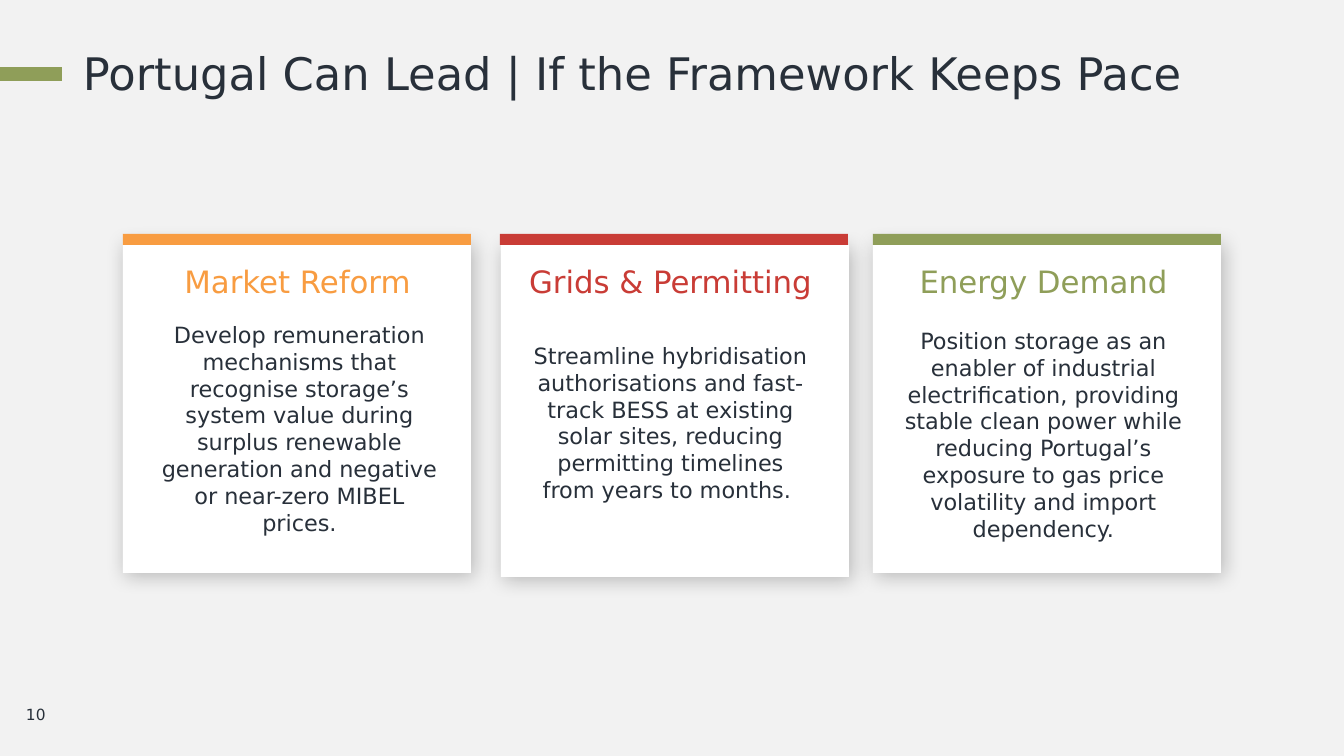
"""Builds the slide on Portugal's storage framework with three policy cards."""
from lxml import etree
from pptx import Presentation
from pptx.dml.color import RGBColor
from pptx.enum.shapes import MSO_CONNECTOR, MSO_SHAPE
from pptx.enum.text import MSO_ANCHOR, MSO_AUTO_SIZE, PP_ALIGN
from pptx.oxml import parse_xml
from pptx.oxml.ns import qn
from pptx.util import Emu, Pt

RECTANGLE = MSO_SHAPE.RECTANGLE
STRAIGHT = MSO_CONNECTOR.STRAIGHT
LEFT, CENTER = PP_ALIGN.LEFT, PP_ALIGN.CENTER
TOP, MIDDLE = MSO_ANCHOR.TOP, MSO_ANCHOR.MIDDLE
NO_FIT = MSO_AUTO_SIZE.NONE

EMU_PER_PX = 914400 / 100.8
TITLE_ONLY = 5
FONT = "DejaVu Sans"
INK, PAPER, WHITE = "28303A", "F2F2F2", "FFFFFF"
ORANGE, RED, GREEN = "F89C41", "C93C36", "8F9E59"
CARD_WIDTH, CARD_HEIGHT = 348, 332
BAR_TOP, BAR_HEIGHT = 234, 11
HEADING_TOP = 263

SHADOW = (
    '<a:effectLst xmlns:a="http://schemas.openxmlformats.org/drawingml/2006/main">'
    '<a:outerShdw blurRad="177800" dist="38100" dir="3180000" algn="tl" rotWithShape="0">'
    '<a:srgbClr val="000000"><a:alpha val="23000"/></a:srgbClr>'
    '</a:outerShdw></a:effectLst>'
)

CARDS = [
    dict(bar_left=123, left=123, top=241, color=ORANGE, heading="Market Reform",
         heading_left=149, body_left=158, body_top=321,
         body="Develop remuneration mechanisms that recognise storage’s system value "
              "during surplus renewable generation and negative or near-zero MIBEL prices."),
    dict(bar_left=500, left=501, top=245, color=RED, heading="Grids & Permitting",
         heading_left=522, body_left=529, body_top=342,
         body="Streamline hybridisation authorisations and fast-track BESS at existing "
              "solar sites, reducing permitting timelines from years to months. "),
    dict(bar_left=873, left=873, top=241, color=GREEN, heading="Energy Demand",
         heading_left=895, body_left=902, body_top=327,
         body="Position storage as an enabler of industrial electrification, providing "
              "stable clean power while reducing Portugal’s exposure to gas price "
              "volatility and import dependency."),
]


def px(*lengths):
    """Turn pixel lengths into EMU."""
    return [Emu(round(length * EMU_PER_PX)) for length in lengths]


def rgb(color):
    """Turn a hex string into a colour."""
    return RGBColor.from_string(color)


class Composer:
    """Holds the style and the current page, and draws elements on it."""

    def __init__(self, page):
        """Start on a page with the plain background."""
        self.page = page
        page.background.fill.solid()
        page.background.fill.fore_color.rgb = rgb(PAPER)

    def fill_text(self, box, words, size, color=INK, align=LEFT, anchor=TOP, inset=0):
        """Fill a box with one styled paragraph."""
        frame = box.text_frame
        frame.word_wrap = True
        frame.auto_size = NO_FIT
        frame.vertical_anchor = anchor
        (frame.margin_left, frame.margin_top,
         frame.margin_right, frame.margin_bottom) = px(inset, inset // 2, inset, inset // 2)
        para = frame.paragraphs[0]
        para.text = words
        para.alignment = align
        para.line_spacing = 1.0
        para.space_before = Pt(0)
        para.font.name = FONT
        para.font.size = Pt(size)
        para.font.color.rgb = rgb(color)

    def title(self, area, words):
        """Move and format the title placeholder."""
        box = self.page.shapes.title
        box.left, box.top, box.width, box.height = px(*area)
        self.fill_text(box, words, 32)

    def text(self, area, words, size, **style):
        """Add a text box."""
        self.fill_text(self.page.shapes.add_textbox(*px(*area)), words, size, **style)

    def rectangle(self, area, color, shadow=False):
        """Add a filled rectangle, with a soft shadow if asked."""
        box = self.page.shapes.add_shape(RECTANGLE, *px(*area))
        box.fill.solid()
        box.fill.fore_color.rgb = rgb(color)
        box.line.fill.background()
        if shadow:
            box._element.spPr.append(parse_xml(SHADOW))
        else:
            box.shadow.inherit = False

    def line(self, ends, color, width):
        """Add a straight line."""
        rule = self.page.shapes.add_connector(STRAIGHT, *px(*ends))
        rule.line.color.rgb = rgb(color)
        rule.line.width = Pt(width)
        etree.SubElement(rule._element.spPr, qn("a:effectLst"))

    def card(self, bar_left, left, top, color, heading, heading_left,
             body_left, body_top, body):
        """Add a card with a coloured bar, a heading and a body."""
        self.rectangle((left, top, CARD_WIDTH, CARD_HEIGHT), WHITE, shadow=True)
        self.rectangle((bar_left, BAR_TOP, CARD_WIDTH, BAR_HEIGHT), color)
        self.text((heading_left, HEADING_TOP, 297, 81), heading, 22, color=color, align=CENTER)
        self.text((body_left, body_top, 283, 172), body, 16, align=CENTER)


def main():
    """Build and save the deck."""
    deck = Presentation()
    deck.slide_width, deck.slide_height = px(1344, 756)
    composer = Composer(deck.slides.add_slide(deck.slide_layouts[TITLE_ONLY]))
    composer.title((83, 46, 1180, 54), "Portugal Can Lead | If the Framework Keeps Pace")
    composer.line((62, 74, 0, 74), GREEN, 10.25)
    composer.text((16, 694, 69, 40), "10", 11, anchor=MIDDLE, inset=10)
    for card in CARDS:
        composer.card(**card)
    deck.save("out.pptx")


if __name__ == "__main__":
    main()
